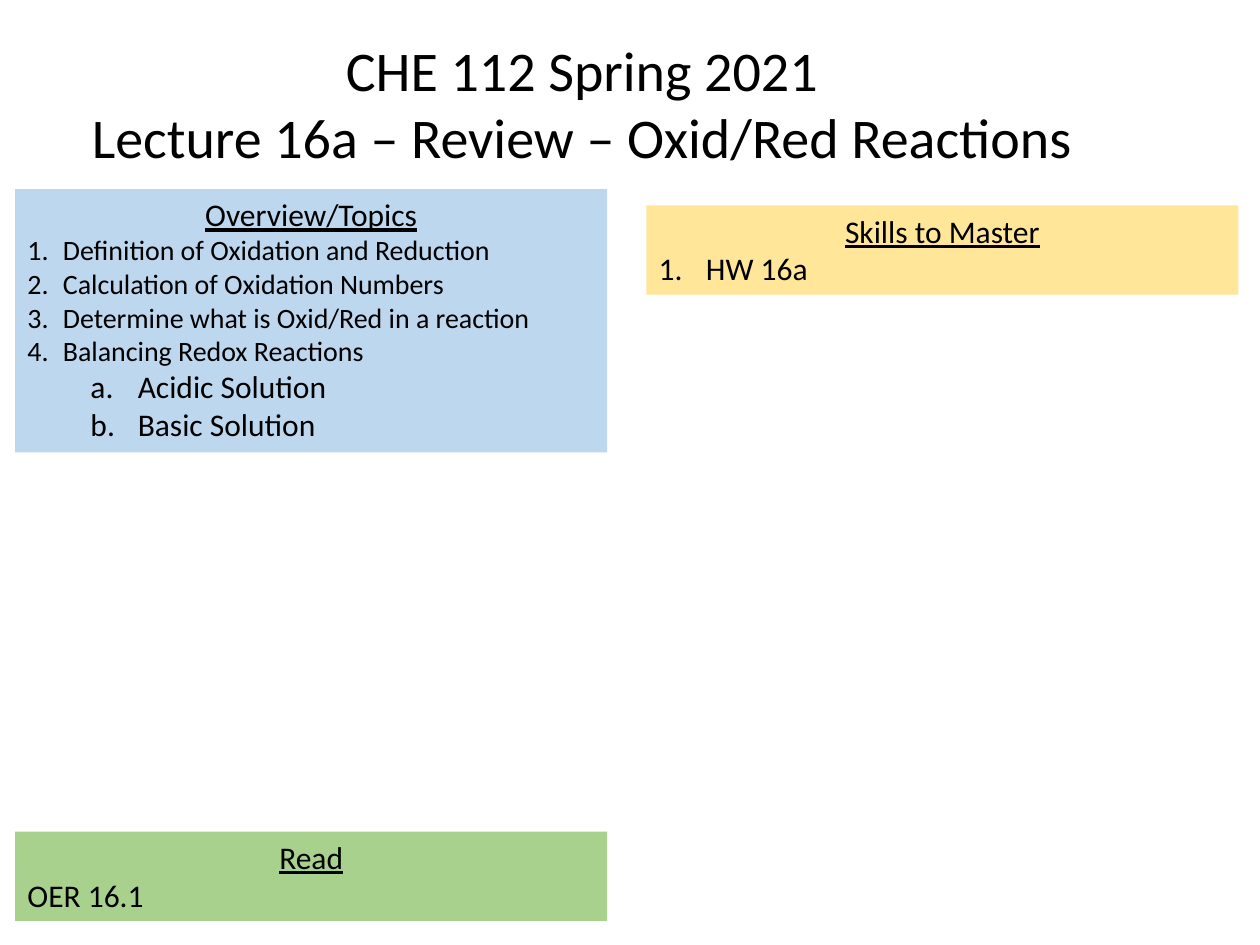
from lxml import etree
from pptx import Presentation
from pptx.dml.color import RGBColor
from pptx.enum.shapes import MSO_SHAPE as Shape
from pptx.enum.text import MSO_ANCHOR as Anchor, MSO_AUTO_SIZE as AutoSize, PP_ALIGN as Align
from pptx.oxml.ns import qn
from pptx.util import Pt

COLORS = {"text": "000000", "topics": "BDD7EE", "skills": "FFE699", "read": "A9D18E"}
FONT = "Calibri"
LEFT, RIGHT, PANEL_WIDTH = 8.64, 369.36, 338.4

# Item styles: size, level, left margin, numbering
TOPIC = (16, 0, 20.25, "arabicPeriod")
SUBTOPIC = (18, 1, 63, "alphaLcPeriod")
SKILL = (18, 0, 27, "arabicPeriod")
PLAIN = (18, 0, 0, None)


class LectureSlide:
    """Holds the style and the current slide."""

    def __init__(self, presentation):
        self.slide = presentation.slides.add_slide(presentation.slide_layouts[5])

    def format(self, paragraph, size, align=Align.LEFT, underline=False):
        paragraph.alignment = align
        for run in paragraph.runs:
            run.font.name = FONT
            run.font.size = Pt(size)
            run.font.underline = underline
            run.font.color.rgb = RGBColor.from_string(COLORS["text"])

    def number(self, paragraph, margin, scheme, hanging):
        properties = paragraph._p.get_or_add_pPr()
        properties.set("marL", str(Pt(margin)))
        properties.set("indent", str(-Pt(hanging)))
        etree.SubElement(properties, qn("a:buFont"), typeface="+mj-lt")
        etree.SubElement(properties, qn("a:buAutoNum"), type=scheme)

    def title(self, lines, left, top, width, height):
        title = self.slide.shapes.title
        title.left, title.top, title.width, title.height = map(Pt, (left, top, width, height))
        frame = title.text_frame
        frame.text = "\n".join(lines)
        frame.word_wrap = False
        frame.auto_size = AutoSize.SHAPE_TO_FIT_TEXT
        frame.vertical_anchor = Anchor.TOP
        for paragraph in frame.paragraphs:
            self.format(paragraph, 32, Align.CENTER)

    def panel(self, heading, items, color, left, top, height):
        panel = self.slide.shapes.add_shape(
            Shape.RECTANGLE, Pt(left), Pt(top), Pt(PANEL_WIDTH), Pt(height))
        panel.shadow.inherit = False
        panel.fill.solid()
        panel.fill.fore_color.rgb = RGBColor.from_string(COLORS[color])
        panel.line.fill.background()
        frame = panel.text_frame
        frame.word_wrap = True
        frame.auto_size = AutoSize.SHAPE_TO_FIT_TEXT
        frame.vertical_anchor = Anchor.TOP
        frame.text = heading
        self.format(frame.paragraphs[0], 18, Align.CENTER, underline=True)
        for text, (size, level, margin, scheme) in items:
            paragraph = frame.add_paragraph()
            paragraph.text = text
            paragraph.level = level
            self.format(paragraph, size)
            if scheme:
                self.number(paragraph, margin, scheme, hanging=min(margin, 27))


def main():
    presentation = Presentation()
    presentation.slide_width, presentation.slide_height = Pt(720), Pt(540)
    lecture = LectureSlide(presentation)

    # Panels
    lecture.panel("Overview/Topics", [
        ("Definition of Oxidation and Reduction", TOPIC),
        ("Calculation of Oxidation Numbers", TOPIC),
        ("Determine what is Oxid/Red in a reaction", TOPIC),
        ("Balancing Redox Reactions", TOPIC),
        ("Acidic Solution", SUBTOPIC),
        ("Basic Solution", SUBTOPIC),
    ], "topics", LEFT, 108, 150.5)
    lecture.panel("Skills to Master", [("HW 16a", SKILL)], "skills", RIGHT, 117.4, 51)
    lecture.panel("Read", [("OER 16.1", PLAIN)], "read", LEFT, 475.2, 51)

    # Title
    lecture.title(["CHE 112 Spring 2021", "Lecture 16a – Review – Oxid/Red Reactions"],
                  42.5, 16.6, 580.3, 85)

    presentation.save("out.pptx")


if __name__ == "__main__":
    main()
